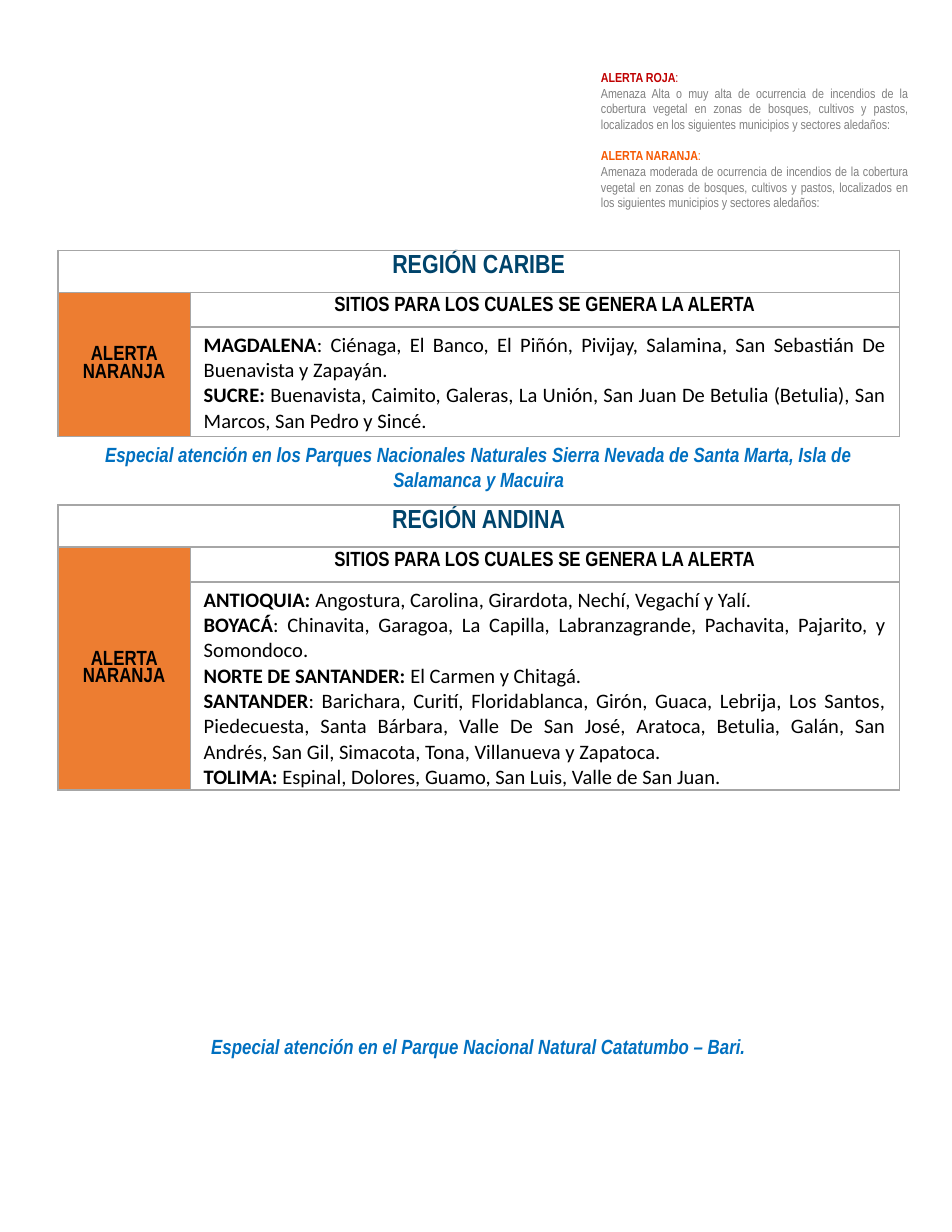
from dataclasses import dataclass

from lxml.etree import SubElement
from pptx import Presentation
from pptx.dml.color import RGBColor
from pptx.enum.text import MSO_ANCHOR, MSO_AUTO_SIZE, PP_ALIGN
from pptx.oxml.ns import qn
from pptx.util import Pt


@dataclass(frozen=True)
class Theme:
    narrow: str = "Arial Narrow"
    body: str = "Calibri"
    red: str = "C00000"
    orange: str = "F65800"
    orange_fill: str = "ED7D31"
    grey: str = "808080"
    border: str = "A6A6A6"
    navy: str = "00446B"
    blue: str = "0070C0"
    black: str = "000000"
    legend_size: float = 7
    text_size: float = 11
    title_size: float = 14


theme = Theme()
LEFT, WIDTH = 31, 451.2
LABEL_WIDTH = 71
TITLE_HEIGHT, HEADER_HEIGHT = 22.5, 18.7

legend = [
    ("ALERTA ROJA", theme.red,
     "Amenaza Alta o muy alta de ocurrencia de incendios de la cobertura vegetal en zonas de "
     "bosques, cultivos y pastos, localizados en los siguientes municipios y sectores aledaños:"),
    ("ALERTA NARANJA", theme.orange,
     "Amenaza moderada de ocurrencia de incendios de la cobertura vegetal en zonas de "
     "bosques, cultivos y pastos, localizados en los siguientes municipios y sectores aledaños:"),
]
regions = [
    ("REGIÓN ANDINA", 270.7, 111.6, [
        ("ANTIOQUIA: ", "Angostura, Carolina, Girardota, Nechí, Vegachí y Yalí."),
        ("BOYACÁ", ": Chinavita, Garagoa, La Capilla, Labranzagrande, Pachavita, Pajarito, y Somondoco."),
        ("NORTE DE SANTANDER: ", "El Carmen y Chitagá."),
        ("SANTANDER", ": Barichara, Curití, Floridablanca, Girón, Guaca, Lebrija, Los Santos, "
                      "Piedecuesta, Santa Bárbara, Valle De San José, Aratoca, Betulia, Galán, "
                      "San Andrés, San Gil, Simacota, Tona, Villanueva y Zapatoca."),
        ("TOLIMA: ", "Espinal, Dolores, Guamo, San Luis, Valle de San Juan."),
    ]),
    ("REGIÓN CARIBE", 134.2, 58.5, [
        ("MAGDALENA", ": Ciénaga, El Banco, El Piñón, Pivijay, Salamina, San Sebastián De "
                      "Buenavista y Zapayán."),
        ("SUCRE: ", "Buenavista, Caimito, Galeras, La Unión, San Juan De Betulia (Betulia), "
                    "San Marcos, San Pedro y Sincé."),
    ]),
]
notes = [
    (550.5, 20.9, "Especial atención en el Parque Nacional Natural Catatumbo – Bari."),
    (233.3, 33.8, "Especial atención en los Parques Nacionales Naturales Sierra Nevada de "
                  "Santa Marta, Isla de Salamanca y Macuira"),
]


def write(paragraph, pieces, size, color, font=theme.narrow, align=PP_ALIGN.CENTER, italic=False):
    """Fill a paragraph with (text, bold) pieces in one style."""
    paragraph.alignment = align
    for text, bold in pieces:
        run = paragraph.add_run()
        run.text = text
        run.font.name, run.font.size = font, Pt(size)
        run.font.bold, run.font.italic = bold, italic
        run.font.color.rgb = RGBColor.from_string(color)


def add_text_box(left, top, width, height, anchor):
    text_frame = slide.shapes.add_textbox(Pt(left), Pt(top), Pt(width), Pt(height)).text_frame
    text_frame.word_wrap = True
    text_frame.auto_size = MSO_AUTO_SIZE.SHAPE_TO_FIT_TEXT
    text_frame.vertical_anchor = anchor
    return text_frame


presentation = Presentation()
presentation.slide_width, presentation.slide_height = Pt(510.25), Pt(660.25)
slide = presentation.slides.add_slide(presentation.slide_layouts[6])

# Legend of alert levels
text_frame = add_text_box(315, 33.8, 178.6, 83.5, MSO_ANCHOR.TOP)
for index, (level, color, meaning) in enumerate(legend):
    heading = text_frame.add_paragraph() if index else text_frame.paragraphs[0]
    if index:
        heading.space_before = Pt(8.4)
    write(heading, [(level, True), (":", False)], theme.legend_size, color, align=PP_ALIGN.LEFT)
    write(text_frame.add_paragraph(), [(meaning, False)], theme.legend_size, theme.grey,
          align=PP_ALIGN.JUSTIFY)

# Region tables
for title, top, sites_height, departments in regions:
    heights = (TITLE_HEIGHT, HEADER_HEIGHT, sites_height)
    table = slide.shapes.add_table(3, 2, Pt(LEFT), Pt(top), Pt(WIDTH), Pt(sum(heights))).table
    table.first_row = table.horz_banding = False
    for column, width in zip(table.columns, (LABEL_WIDTH, WIDTH - LABEL_WIDTH)):
        column.width = Pt(width)
    for row, height in zip(table.rows, heights):
        row.height = Pt(height)

    for cell in table.iter_cells():
        cell.margin_left = cell.margin_right = Pt(7.2)
        cell.margin_top = cell.margin_bottom = Pt(2.9)
        cell.fill.background()
        properties = cell._tc.get_or_add_tcPr()
        for position, side in enumerate(("a:lnL", "a:lnR", "a:lnT", "a:lnB")):
            line = SubElement(properties, qn(side), w=str(Pt(1)))
            SubElement(SubElement(line, qn("a:solidFill")), qn("a:srgbClr"), val=theme.border)
            properties.insert(position, line)

    table.cell(0, 0).merge(table.cell(0, 1))
    table.cell(1, 0).merge(table.cell(2, 0))
    label = table.cell(1, 0)
    label.vertical_anchor = MSO_ANCHOR.MIDDLE
    label.fill.solid()
    label.fill.fore_color.rgb = RGBColor.from_string(theme.orange_fill)

    for cell, text, size, color in (
        (table.cell(0, 0), title, theme.title_size, theme.navy),
        (label, "ALERTA NARANJA", theme.text_size, theme.black),
        (table.cell(1, 1), "SITIOS PARA LOS CUALES SE GENERA LA ALERTA", theme.text_size, theme.black),
    ):
        paragraph = cell.text_frame.paragraphs[0]
        paragraph.line_spacing = 0.9
        write(paragraph, [(text, True)], size, color)

    sites = table.cell(2, 1)
    sites.margin_bottom = Pt(0)
    for index, (department, towns) in enumerate(departments):
        paragraph = sites.text_frame.add_paragraph() if index else sites.text_frame.paragraphs[0]
        write(paragraph, [(department, True), (towns, False)], theme.text_size, theme.black,
              theme.body, PP_ALIGN.JUSTIFY)

# Notes on national parks
for top, height, note in notes:
    text_frame = add_text_box(LEFT, top, WIDTH, height, MSO_ANCHOR.MIDDLE)
    write(text_frame.paragraphs[0], [(note, True)], theme.text_size, theme.blue, italic=True)

presentation.save("out.pptx")
